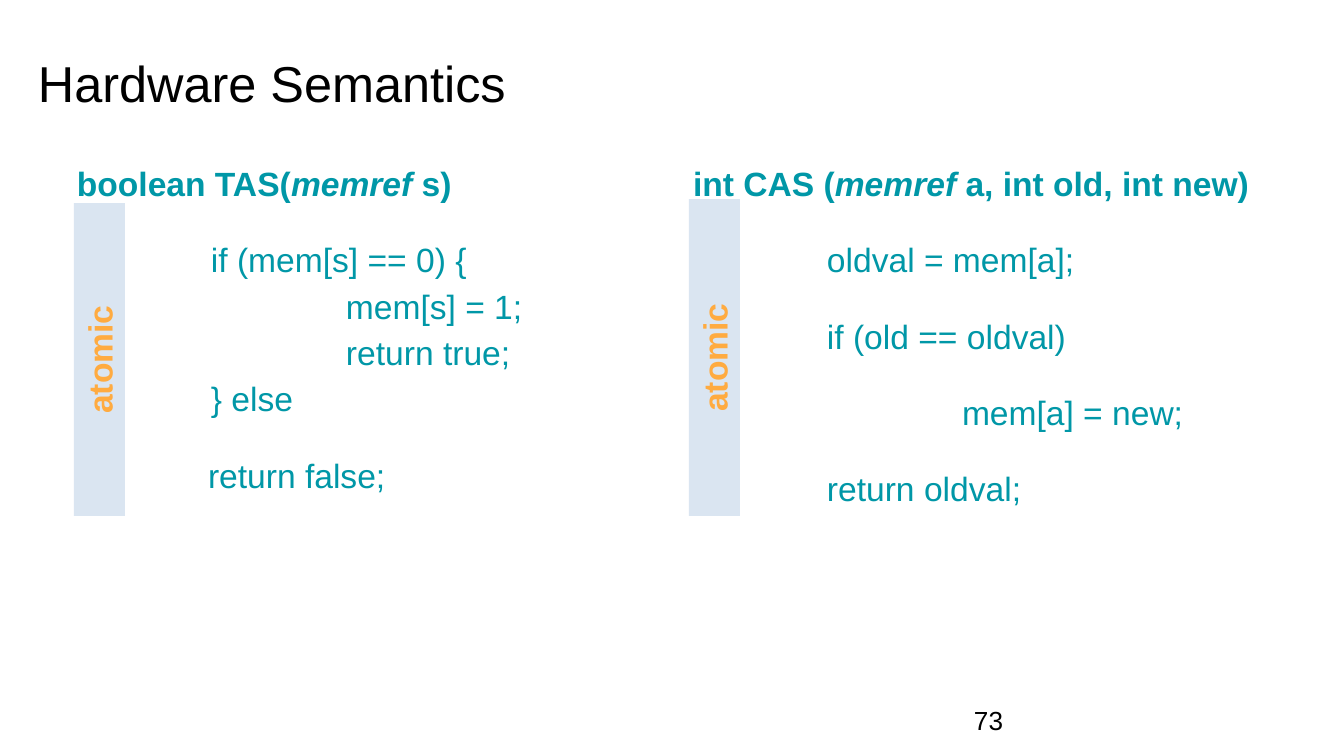
from pptx import Presentation
from pptx.dml.color import RGBColor
from pptx.enum.shapes import MSO_SHAPE
from pptx.enum.text import MSO_ANCHOR, MSO_AUTO_SIZE, PP_ALIGN
from pptx.util import Pt
from lxml.etree import SubElement
from pptx.oxml.ns import qn

SCALE = 914400 / 134.4
TEAL = "0097A7"


def px(n):
    return round(n * SCALE)


def write(sp, lines, size=18, color=TEAL, bold=False, align=PP_ALIGN.LEFT,
          anchor=MSO_ANCHOR.TOP, spacing=1.0, inset=(10, 5)):
    tf = sp.text_frame
    tf.word_wrap = True
    tf.auto_size = MSO_AUTO_SIZE.NONE
    tf.vertical_anchor = anchor
    tf.margin_left = tf.margin_right = px(inset[0])
    tf.margin_top = tf.margin_bottom = px(inset[1])
    for i, (runs, indent, after) in enumerate(lines):
        p = tf.paragraphs[0] if i == 0 else tf.add_paragraph()
        pPr = p._p.get_or_add_pPr()
        pPr.set("marL", str(px(indent)))
        pPr.set("indent", "0")
        SubElement(pPr, qn("a:buNone"))
        p.alignment = align
        p.line_spacing = spacing
        p.space_before = Pt(0)
        p.space_after = Pt(after)
        for j, text in enumerate(runs):
            r = p.add_run()
            r.text = text
            r.font.name = "Arial"
            r.font.size = Pt(size)
            r.font.bold = bold or len(runs) > 1
            r.font.italic = j == 1
            r.font.color.rgb = RGBColor.from_string(color)


prs = Presentation()
prs.slide_width = px(1344)
prs.slide_height = px(756)
s = prs.slides.add_slide(prs.slide_layouts[3])
title, left, right = s.placeholders

title.left, title.top, title.width, title.height = px(38), px(20), px(1269), px(125)
write(title, [(["Hardware Semantics"], 0, 0)], size=27, color="000000",
      anchor=MSO_ANCHOR.MIDDLE, inset=(0, 0))

tas = [
    (["boolean TAS(", "memref", " s)"], 0, 16),
    (["if (mem[s] == 0) {"], 134, 0),
    (["mem[s] = 1;"], 269, 0),
    (["return true;"], 269, 0),
    (["} else"], 134, 16),
    (["return false;"], 131, 16),
]
cas = [
    (["int CAS (", "memref", " a, int old, int new)"], 0, 16),
    (["oldval = mem[a];"], 134, 16),
    (["if (old == oldval)"], 134, 16),
    (["mem[a] = new;"], 269, 16),
    (["return oldval;"], 134, 16),
]
for body, x, lines in ((left, 67, tas), (right, 683, cas)):
    body.left, body.top, body.width, body.height = px(x), px(152), px(594), px(563)
    write(body, lines, spacing=1.15)

number = s.shapes.add_textbox(px(964), px(700), px(313), px(41))
write(number, [(["73"], 0, 0)], size=14, color="000000", anchor=MSO_ANCHOR.MIDDLE)

BAR, BOTTOM = 51, 516
for x, top in ((74, 203), (689, 199)):
    length = BOTTOM - top
    bar = s.shapes.add_shape(MSO_SHAPE.RECTANGLE,
                             px(x + (BAR - length) / 2), px(top + (length - BAR) / 2),
                             px(length), px(BAR))
    bar.rotation = 270
    bar.shadow.inherit = False
    bar.fill.solid()
    bar.fill.fore_color.rgb = RGBColor.from_string("DAE5F1")
    bar.line.fill.background()
    write(bar, [(["atomic"], 0, 0)], color="FFAB40", bold=True, align=PP_ALIGN.CENTER)

prs.save("out.pptx")
